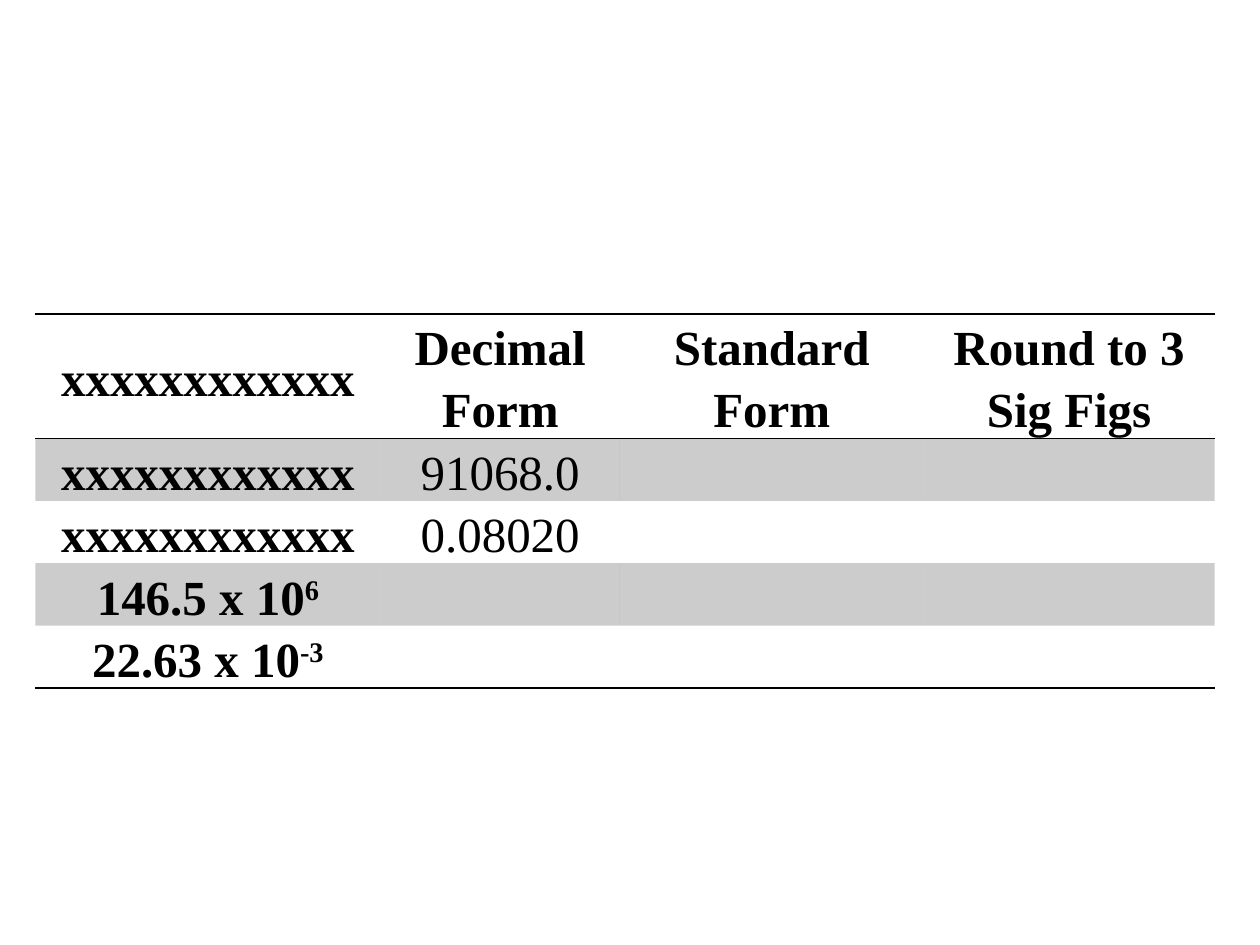
"""Build a significant-figures practice table slide."""
from dataclasses import dataclass

from lxml import etree
from pptx import Presentation
from pptx import util as u
from pptx.dml.color import RGBColor
from pptx.enum import text
from pptx.oxml import ns

WIDTH, HEIGHT = 10, 7.5
LEFT, TOP = 0.028, 0.332
COLUMNS = (0.274, 0.19, 0.241, 0.231)
ROWS = (0.99, 0.49, 0.49, 0.49, 0.49)
NO_STYLE = "{2D5ABB26-0587-4C30-8999-92F81FD0307C}"
BLACK = "000000"


@dataclass(frozen=True)
class Entry:
    """Text of one cell with an optional exponent."""
    base: str = ""
    exponent: str = ""


PLACEHOLDER = Entry("xxxxxxxxxxxx")
GRID = (
    (PLACEHOLDER, Entry("Decimal Form"), Entry("Standard\nForm"), Entry("Round to 3 Sig Figs")),
    (PLACEHOLDER, Entry("91068.0"), Entry(), Entry()),
    (PLACEHOLDER, Entry("0.08020"), Entry(), Entry()),
    (Entry("146.5 x 10", "6"), Entry(), Entry(), Entry()),
    (Entry("22.63 x 10", "-3"), Entry(), Entry(), Entry()),
)


def color(value: str) -> RGBColor:
    """Turn a hex string into a colour."""
    return RGBColor.from_string(value)


def add_run(p, content: str, *, size: float = 28, bold: bool = False,
            baseline: int = 0, hex_color: str = BLACK) -> None:
    """Add formatted text to a paragraph."""
    r = p.add_run()
    r.text = content
    r.font.name = "Times New Roman"
    r.font.size = u.Pt(size)
    r.font.bold = bold
    r.font.color.rgb = color(hex_color)
    if baseline:
        r.font._element.set("baseline", str(baseline * 1000))


def add_border(cell, side: str, hex_color: str = BLACK) -> None:
    """Draw a one-point rule on the given side of a cell."""
    tc_pr = cell._tc.get_or_add_tcPr()
    line = etree.SubElement(tc_pr, ns.qn(f"a:ln{side}"), w=str(u.Pt(1)))
    fill = etree.SubElement(line, ns.qn("a:solidFill"))
    etree.SubElement(fill, ns.qn("a:srgbClr"), val=hex_color)


def shade(cell, hex_color: str, opacity: int) -> None:
    """Fill a cell with a partly transparent colour."""
    cell.fill.solid()
    cell.fill.fore_color.rgb = color(hex_color)
    tone = cell._tc.tcPr.find(".//" + ns.qn("a:srgbClr"))
    etree.SubElement(tone, ns.qn("a:alpha"), val=str(opacity * 1000))


def write_cell(cell, entry: Entry, *, bold: bool) -> None:
    """Write a centred entry into a cell."""
    cell.margin_left = cell.margin_right = u.Inches(0.07)
    cell.margin_top = cell.margin_bottom = 0
    cell.vertical_anchor = text.MSO_ANCHOR.MIDDLE
    if not entry.base:
        return
    tf = cell.text_frame
    for i, content in enumerate(entry.base.split("\n")):
        p = tf.add_paragraph() if i else tf.paragraphs[0]
        p.alignment = text.PP_ALIGN.CENTER
        p.line_spacing = 1.15
        add_run(p, content, bold=bold)
    if entry.exponent:
        add_run(p, entry.exponent, bold=bold, baseline=30)


def add_figures_table(s) -> None:
    """Add the ruled table with shaded alternate rows."""
    frame = s.shapes.add_table(
        len(ROWS), len(COLUMNS), u.Inches(LEFT * WIDTH), u.Inches(TOP * HEIGHT),
        u.Inches(sum(COLUMNS) * WIDTH), u.Inches(sum(ROWS)))
    table = frame.table
    table.horz_banding = False
    frame._element.find(".//" + ns.qn("a:tableStyleId")).text = NO_STYLE
    for column, share in zip(table.columns, COLUMNS):
        column.width = u.Inches(share * WIDTH)
    for row, height in zip(table.rows, ROWS):
        row.height = u.Inches(height)
    last = len(ROWS) - 1
    for i, entries in enumerate(GRID):
        for j, entry in enumerate(entries):
            cell = table.cell(i, j)
            write_cell(cell, entry, bold=i == 0 or j == 0)
            if i == 0:
                add_border(cell, "T")
            if i in (0, last):
                add_border(cell, "B")
            if i % 2:
                shade(cell, BLACK, 20)
            else:
                cell.fill.background()


def main() -> None:
    """Create and save the slide."""
    prs = Presentation()
    prs.slide_width, prs.slide_height = u.Inches(WIDTH), u.Inches(HEIGHT)
    s = prs.slides.add_slide(prs.slide_layouts[6])
    add_figures_table(s)
    prs.save("out.pptx")


if __name__ == "__main__":
    main()
